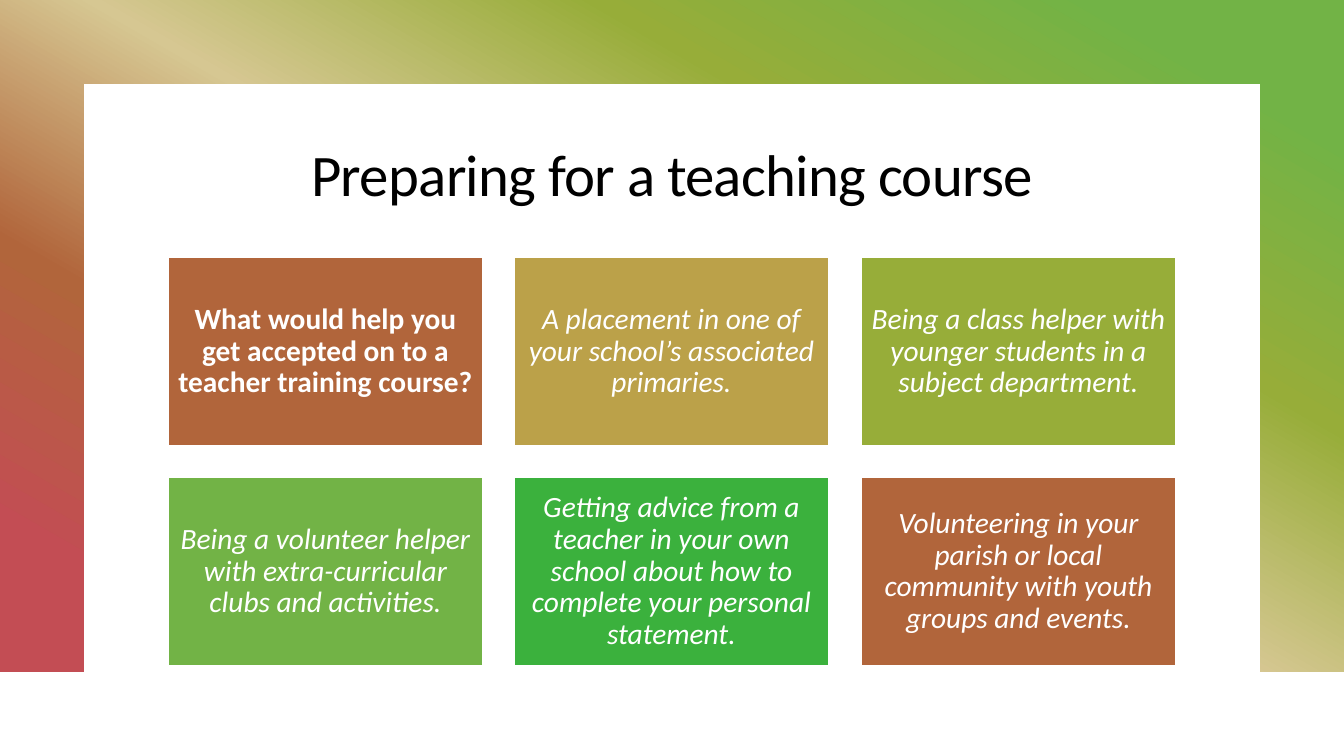
from lxml.etree import SubElement
from pptx import Presentation
from pptx.dml.color import RGBColor
from pptx.enum.shapes import MSO_SHAPE
from pptx.enum.text import MSO_ANCHOR, MSO_AUTO_SIZE, PP_ALIGN
from pptx.oxml.ns import qn
from pptx.util import Emu, Pt

PX_PER_INCH = 100.8
BACKDROP_STOPS = [(10, "72B346"), (30, "97AD39"), (50, "D6C792"), (70, "B1653B"), (90, "C34D54")]
TILES = [
    ("B1653B", "What would help you get accepted on to a teacher training course?"),
    ("BBA149", "A placement in one of your school’s associated primaries."),
    ("97AD39", "Being a class helper with younger students in a subject department."),
    ("72B346", "Being a volunteer helper with extra-curricular clubs and activities."),
    ("3BB13D", "Getting advice from a teacher in your own school about how to complete "
               "your personal statement."),
    ("B1653B", "Volunteering in your parish or local community with youth groups and events."),
]
COLUMNS = 3
TILE_LEFT, TILE_TOP = 168, 257
TILE_WIDTH, TILE_HEIGHT = 315, 189
TILE_GAP = TILE_WIDTH / 10


def px(length):
    return Emu(round(length * 914400 / PX_PER_INCH))


def color(hex_string):
    return RGBColor.from_string(hex_string)


class SlideBuilder:
    font_name = "Calibri"
    white = "FFFFFF"

    def __init__(self, slide):
        self.slide = slide

    def rectangle(self, left, top, width, height, fill=None):
        shape = self.slide.shapes.add_shape(
            MSO_SHAPE.RECTANGLE, px(left), px(top), px(width), px(height))
        shape.shadow.inherit = False
        shape.line.fill.background()
        if fill:
            shape.fill.solid()
            shape.fill.fore_color.rgb = color(fill)
        return shape

    def gradient_rectangle(self, left, top, width, height, stops, angle):
        shape = self.rectangle(left, top, width, height)
        shape.fill.gradient()
        shape.fill.gradient_angle = angle
        stop_list = shape._element.spPr.find(qn("a:gradFill")).find(qn("a:gsLst"))
        for old_stop in list(stop_list):
            stop_list.remove(old_stop)
        for percent, hex_string in stops:
            stop = SubElement(stop_list, qn("a:gs"), pos=str(percent * 1000))
            SubElement(stop, qn("a:srgbClr"), val=hex_string)

    def centered_text(self, frame, text, size, hex_string, line_spacing):
        frame.word_wrap = True
        frame.auto_size = MSO_AUTO_SIZE.NONE
        frame.vertical_anchor = MSO_ANCHOR.MIDDLE
        frame.text = text
        paragraph = frame.paragraphs[0]
        paragraph.alignment = PP_ALIGN.CENTER
        paragraph.line_spacing = line_spacing
        paragraph.font.name = self.font_name
        paragraph.font.size = Pt(size)
        paragraph.font.color.rgb = color(hex_string)
        return paragraph

    def title(self, left, top, width, height, text):
        shape = self.slide.shapes.title
        shape.left, shape.top, shape.width, shape.height = map(px, (left, top, width, height))
        paragraph = self.centered_text(shape.text_frame, text, 42, "000000", 0.95)
        paragraph.runs[0]._r.get_or_add_rPr().set("spc", "-50")
        # Bring the title in front of the panel
        self.slide.shapes._spTree.append(shape._element)

    def tile(self, left, top, fill, text, heading):
        shape = self.rectangle(left, top, TILE_WIDTH, TILE_HEIGHT, fill)
        shape.line.color.rgb = color(self.white)
        shape.line.width = Pt(1)
        frame = shape.text_frame
        frame.margin_left = frame.margin_right = frame.margin_top = frame.margin_bottom = px(9)
        paragraph = self.centered_text(frame, text, 21, self.white, 0.9)
        paragraph.font.bold = heading
        paragraph.font.italic = not heading


def main():
    presentation = Presentation()
    presentation.slide_width, presentation.slide_height = px(1344), px(756)
    builder = SlideBuilder(presentation.slides.add_slide(presentation.slide_layouts[5]))

    # Backdrop and panel
    builder.gradient_rectangle(0, -1, 1344, 673, BACKDROP_STOPS, 240)
    builder.rectangle(84, 84, 1176, 588, builder.white)

    # Title
    builder.title(168, 125, 1008, 102, "Preparing for a teaching course")

    # Grid of tiles, the first one holding the question
    for index, (fill, text) in enumerate(TILES):
        row, column = divmod(index, COLUMNS)
        left = TILE_LEFT + round(column * (TILE_WIDTH + TILE_GAP))
        top = TILE_TOP + round(row * (TILE_HEIGHT + TILE_GAP))
        builder.tile(left, top, fill, text, heading=index == 0)

    presentation.save("out.pptx")


if __name__ == "__main__":
    main()
